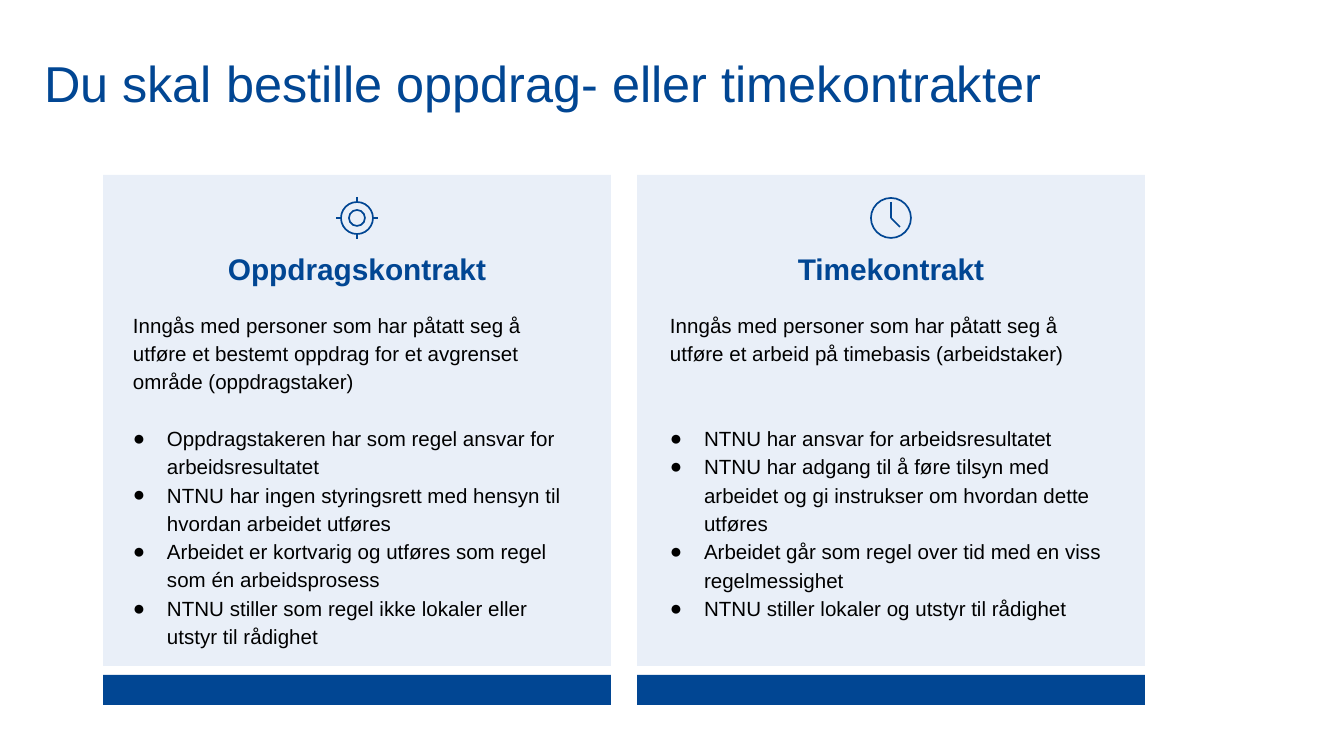
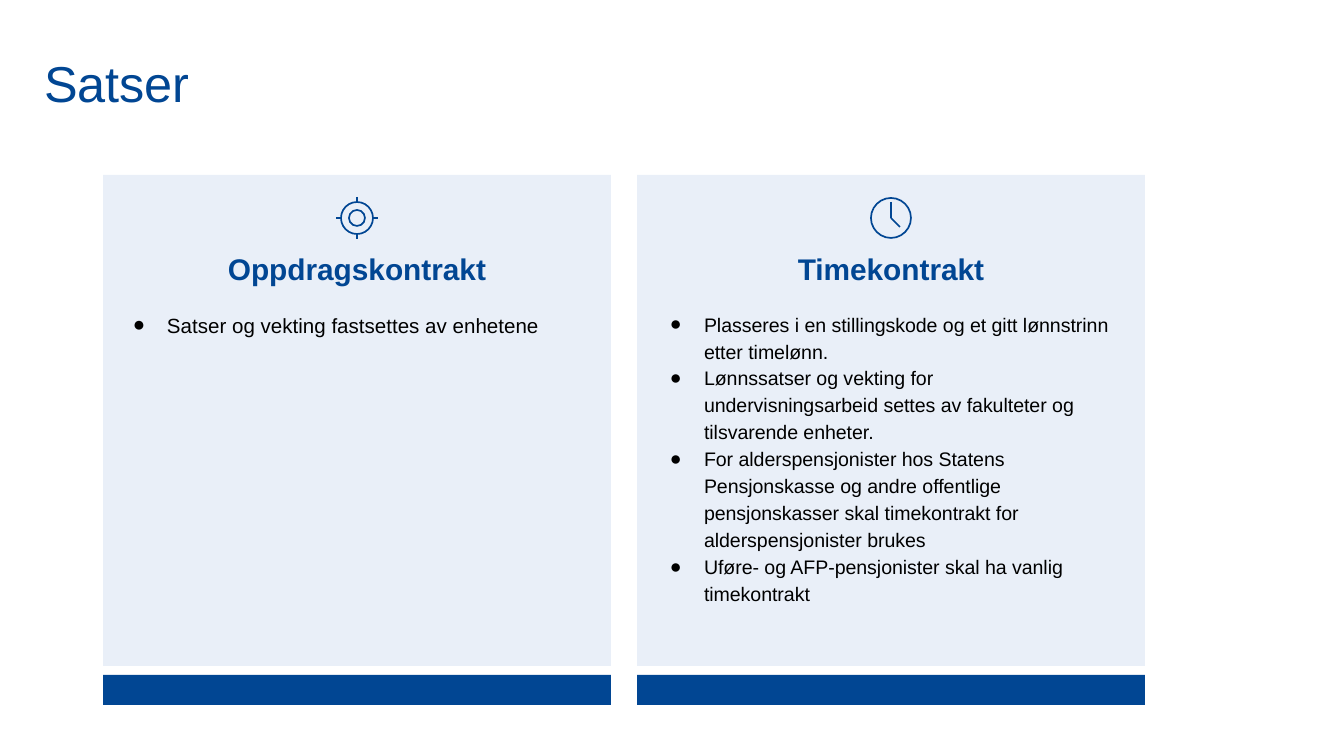
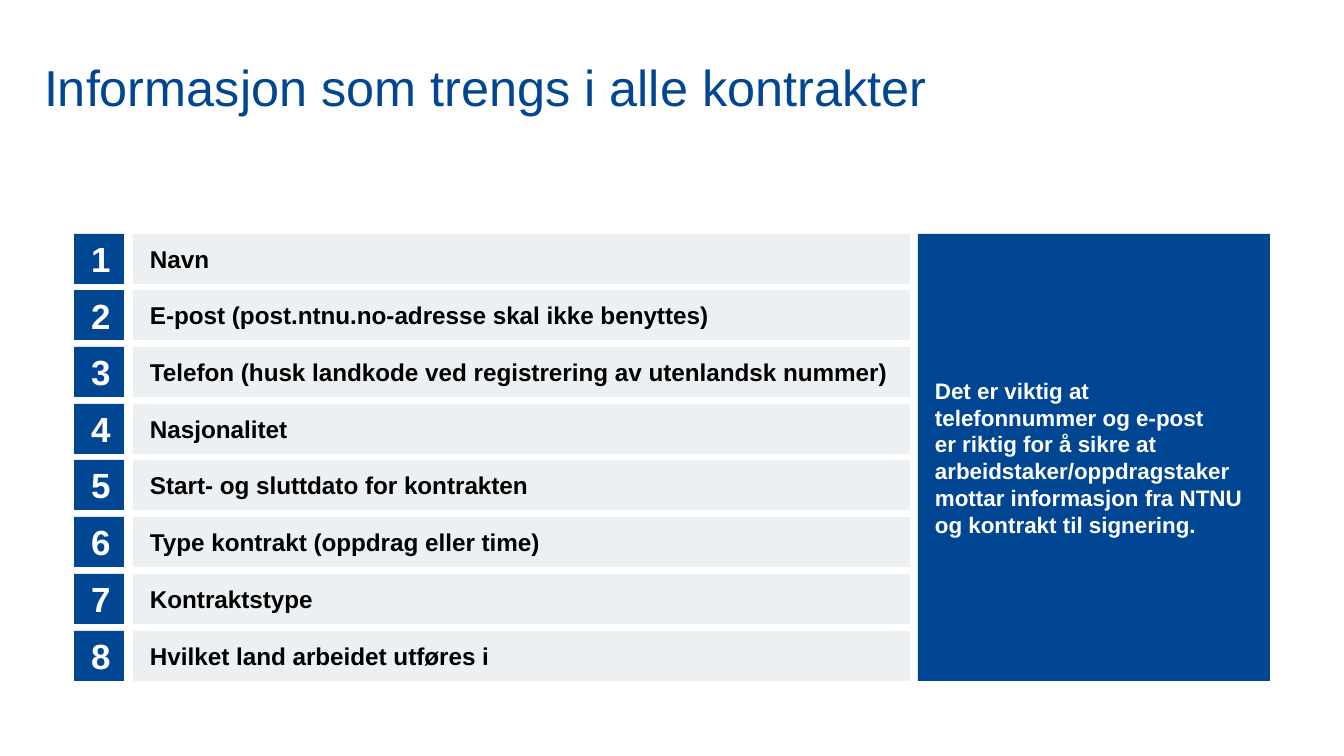
"""Build three slides on assignment and hourly contracts."""
from lxml import etree
from pptx import Presentation
from pptx.dml.color import RGBColor
from pptx.enum.shapes import MSO_CONNECTOR, MSO_SHAPE
from pptx.enum.text import MSO_ANCHOR, MSO_AUTO_SIZE, PP_ALIGN
from pptx.oxml.ns import qn
from pptx.util import Emu, Pt

RECT, OVAL = MSO_SHAPE.RECTANGLE, MSO_SHAPE.OVAL
LINE = MSO_CONNECTOR.STRAIGHT
TOP, MIDDLE = MSO_ANCHOR.TOP, MSO_ANCHOR.MIDDLE
LEFT, CENTER = PP_ALIGN.LEFT, PP_ALIGN.CENTER
FIXED = MSO_AUTO_SIZE.NONE

WIDTH, HEIGHT = 1344, 756
SCALE = 9144000 / WIDTH
FONT = "Arial"
INK = {"blue": "014693", "pale": "B6C8E9", "grey": "ECF0F3", "black": "000000", "white": "FFFFFF"}
HUE = {name: RGBColor.from_string(code) for name, code in INK.items()}


def px(*nums):
    return [Emu(round(num * SCALE)) for num in nums]


def write(shape, lines, size, color, bold=False, align=LEFT, anchor=MIDDLE,
          pad=(17, 17, 17, 17), space=1.0, plain=0, gap=0, bullet=False):
    frame = shape.text_frame
    frame.word_wrap, frame.auto_size, frame.vertical_anchor = True, FIXED, anchor
    frame.margin_left, frame.margin_top, frame.margin_right, frame.margin_bottom = px(*pad)
    for num, line in enumerate(lines):
        para = frame.add_paragraph() if num else frame.paragraphs[0]
        para.text = line
        props = para._p.get_or_add_pPr()
        dotted = bullet and num >= plain
        step = px(34)[0] if dotted else 0
        props.set("marL", str(step))
        props.set("indent", str(-step))
        if dotted:
            tint = etree.SubElement(props, qn("a:buClr"))
            etree.SubElement(tint, qn("a:srgbClr"), val=INK[color])
            etree.SubElement(props, qn("a:buFont"), typeface=FONT)
            etree.SubElement(props, qn("a:buChar"), char="●")
        else:
            etree.SubElement(props, qn("a:buNone"))
        para.alignment, para.line_spacing = align, space
        para.space_before = Pt(gap if num and num == plain else 0)
        para.space_after = Pt(0)
        for run in para.runs:
            font = run.font
            font.name, font.size, font.bold = FONT, Pt(size), bold
            font.color.rgb = HUE[color]


deck = Presentation()
deck.slide_width, deck.slide_height = px(WIDTH, HEIGHT)

cards = [("Oppdragskontrakt", 103, (116, 292, 465, 374)),
         ("Timekontrakt", 637, (653, 292, 476, 419))]
pairs = [
    ("Du skal bestille oppdrag- eller timekontrakter", [
        (11, 1, 15.2, [
            "Inngås med personer som har påtatt seg å utføre et bestemt oppdrag for et avgrenset område (oppdragstaker)",
            "Oppdragstakeren har som regel ansvar for arbeidsresultatet",
            "NTNU har ingen styringsrett med hensyn til hvordan arbeidet utføres",
            "Arbeidet er kortvarig og utføres som regel som én arbeidsprosess",
            "NTNU stiller som regel ikke lokaler eller utstyr til rådighet"]),
        (11, 1, 30.4, [
            "Inngås med personer som har påtatt seg å utføre et arbeid på timebasis (arbeidstaker)",
            "NTNU har ansvar for arbeidsresultatet",
            "NTNU har adgang til å føre tilsyn med arbeidet og gi instrukser om hvordan dette utføres",
            "Arbeidet går som regel over tid med en viss regelmessighet",
            "NTNU stiller lokaler og utstyr til rådighet"])]),
    ("Satser", [
        (11, 0, 0, ["Satser og vekting fastsettes av enhetene"]),
        (10.5, 0, 0, [
            "Plasseres i en stillingskode og et gitt lønnstrinn etter timelønn.",
            "Lønnssatser og vekting for undervisningsarbeid settes av fakulteter og tilsvarende enheter.",
            "For alderspensjonister hos Statens Pensjonskasse og andre offentlige pensjonskasser skal "
            "timekontrakt for alderspensjonister brukes",
            "Uføre- og AFP-pensjonister skal ha vanlig timekontrakt"])]),
]
rings = [(357, 16), (357, 8), (891, 20)]
marks = [(357, 197, 357, 202), (357, 234, 357, 239), (336, 218, 341, 218),
         (373, 218, 378, 218), (891, 202, 891, 218), (891, 218, 900, 227)]

for title, texts in pairs:
    slide = deck.slides.add_slide(deck.slide_layouts[3])
    shapes = slide.shapes
    head = shapes.title
    head.left, head.top, head.width, head.height = px(31, 48, 1138, 77)
    write(head, [title], 27, "blue", pad=(13, 7, 13, 7), space=0.9)
    bodies = list(slide.placeholders)[1:]
    for (name, left, box), body, (size, plain, gap, lines) in zip(cards, bodies, texts):
        for top, high, fill in [(175, 491, "pale"), (675, 30, "blue")]:
            block = shapes.add_shape(RECT, *px(left, top, 508, high))
            block.shadow.inherit = False
            block.fill.solid()
            block.fill.fore_color.rgb = HUE[fill]
            block.line.fill.background()
            if fill == "pale":
                tint = block.element.find(".//" + qn("a:srgbClr"))
                etree.SubElement(tint, qn("a:alpha"), val="29000")
                write(block, [name], 16, "blue", True, CENTER, TOP, (17, 76, 17, 17))
        body.left, body.top, body.width, body.height = px(*box)
        write(body, lines, size, "black", anchor=TOP, space=1.15,
              plain=plain, gap=gap, bullet=True)
        shapes.element.append(body.element)
    for mid, half in rings:
        ring = shapes.add_shape(OVAL, *px(mid - half, 218 - half, 2 * half, 2 * half))
        ring.shadow.inherit = False
        ring.fill.background()
        ring.line.color.rgb, ring.line.width = HUE["blue"], Pt(0.9)
    for ends in marks:
        mark = shapes.add_connector(LINE, *px(*ends))
        mark.line.color.rgb, mark.line.width = HUE["blue"], Pt(0.9)
        etree.SubElement(mark.element.spPr, qn("a:effectLst"))

slide = deck.slides.add_slide(deck.slide_layouts[5])
head = slide.shapes.title
head.left, head.top, head.width, head.height = px(31, 34, 1071, 112)
write(head, ["Informasjon som trengs i alle kontrakter"], 27, "blue", pad=(13, 7, 13, 7), space=0.9)

items = ["Navn", "E-post (post.ntnu.no-adresse skal ikke benyttes)",
         "Telefon (husk landkode ved registrering av utenlandsk nummer)", "Nasjonalitet",
         "Start- og sluttdato for kontrakten", "Type kontrakt (oppdrag eller time)",
         "Kontraktstype", "Hvilket land arbeidet utføres i"]
note = ["Det er viktig at telefonnummer og e-post",
        "er riktig for å sikre at arbeidstaker/oppdragstaker mottar informasjon fra NTNU "
        "og kontrakt til signering."]
tiles = []
for num, item in enumerate(items):
    top = 234 + num * 397 // 7
    tiles.append(((74, top, 50, 50), "blue", [str(num + 1)], 18.7, "white", CENTER))
    tiles.append(((133, top, 777, 50), "grey", [item], 13, "black", LEFT))
tiles.append(((918, 234, 352, 447), "blue", note, 12, "white", LEFT))
for box, fill, lines, size, color, align in tiles:
    tile = slide.shapes.add_shape(RECT, *px(*box))
    tile.shadow.inherit = False
    tile.fill.solid()
    tile.fill.fore_color.rgb = HUE[fill]
    tile.line.fill.background()
    write(tile, lines, size, color, True, align)

deck.save("out.pptx")
